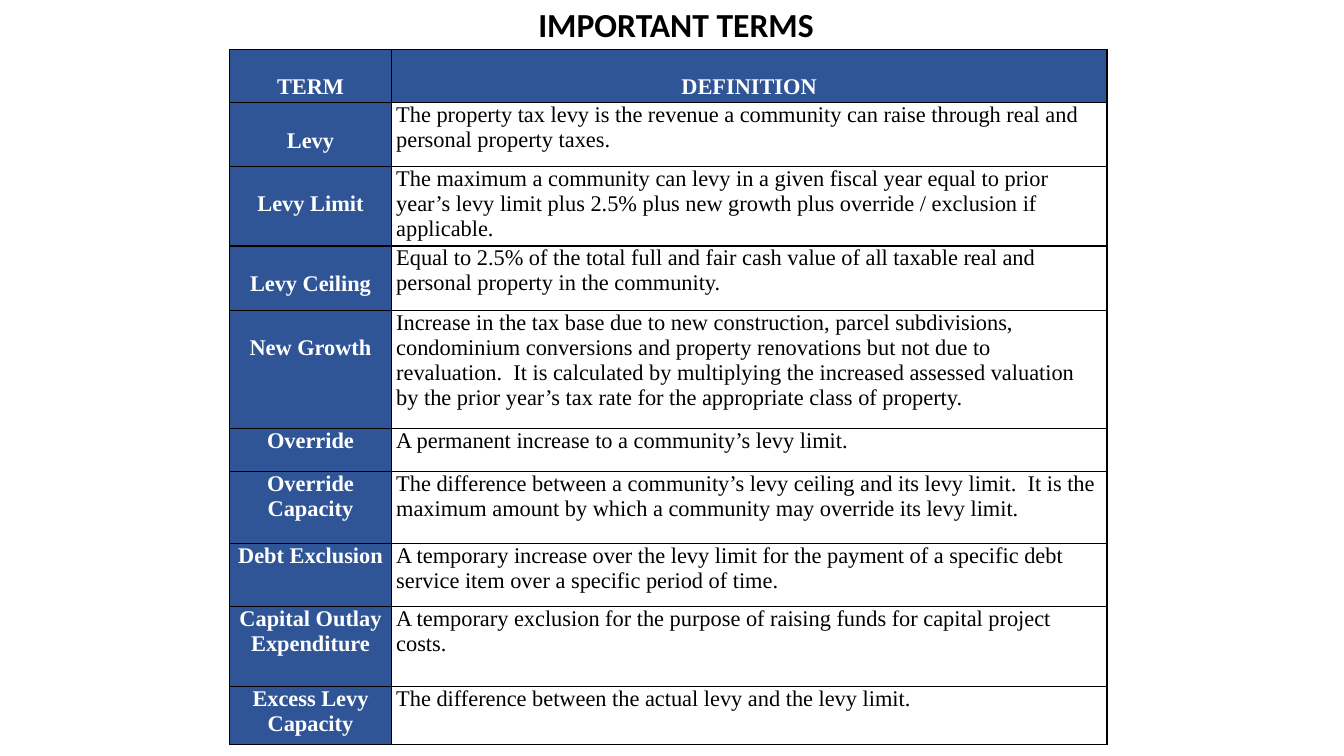
from dataclasses import dataclass

from lxml import etree
from pptx import Presentation
from pptx.dml.color import RGBColor
from pptx.enum.text import MSO_ANCHOR, PP_ALIGN
from pptx.oxml.ns import qn
from pptx.util import Inches, Pt

CENTER, LEFT = PP_ALIGN.CENTER, PP_ALIGN.LEFT
TOP = MSO_ANCHOR.TOP


@dataclass(frozen=True)
class Theme:
    blue: str = "2F5597"
    white: str = "FFFFFF"
    black: str = "000000"
    title_font: str = "Calibri"
    table_font: str = "Times New Roman"
    title_size: int = 24
    table_size: int = 16
    border: int = 1


THEME = Theme()
WIDTH, HEIGHT = 13.33, 7.5
TITLE_AREA = (2.17, -0.01, 9.07, 0.5)
TABLE_LEFT, TABLE_TOP = 2.28, 0.49
COLUMNS = (1.6, 7.1)
CELL_SIDE = 0.05
LINE = 0.25  # one line of table text
HEADER = ("TERM", "DEFINITION")

# row height, lines the term is lowered by, term, definition
TERMS = (
    (0.63, 1, "Levy", "The property tax levy is the revenue a community can raise "
     "through real and personal property taxes."),
    (0.79, 1, "Levy Limit", "The maximum a community can levy in a given fiscal year "
     "equal to prior year’s levy limit plus 2.5% plus new growth plus override / "
     "exclusion if applicable."),
    (0.64, 1, "Levy Ceiling", "Equal to 2.5% of the total full and fair cash value of "
     "all taxable real and personal property in the community."),
    (1.17, 1, "New Growth", "Increase in the tax base due to new construction, parcel "
     "subdivisions, condominium conversions and property renovations but not due to "
     "revaluation.  It is calculated by multiplying the increased assessed valuation "
     "by the prior year’s tax rate for the appropriate class of property."),
    (0.43, 0, "Override", "A permanent increase to a community’s levy limit."),
    (0.71, 0, "Override Capacity", "The difference between a community’s levy ceiling "
     "and its levy limit.  It is the maximum amount by which a community may override "
     "its levy limit."),
    (0.63, 0, "Debt Exclusion", "A temporary increase over the levy limit for the "
     "payment of a specific debt service item over a specific period of time."),
    (0.79, 0, "Capital Outlay Expenditure", "A temporary exclusion for the purpose of "
     "raising funds for capital project costs."),
    (0.58, 0, "Excess Levy Capacity", "The difference between the actual levy and the "
     "levy limit."),
)
HEADER_HEIGHT = 0.53


def set_all(target, values):
    for name, value in values.items():
        setattr(target, name, value)


def write(frame, text, align, color, **font):
    para = frame.paragraphs[0]
    para.alignment = align
    span = para.add_run()
    span.text = text
    set_all(span.font, font)
    span.font.color.rgb = RGBColor.from_string(color)


def add_borders(cell):
    """Draw all four cell edges; edges must come before the fill in the XML."""
    properties = cell._tc.get_or_add_tcPr()
    for position, edge in enumerate(("a:lnL", "a:lnR", "a:lnT", "a:lnB")):
        line = etree.Element(qn(edge), w=str(Pt(THEME.border)))
        fill = etree.SubElement(line, qn("a:solidFill"))
        etree.SubElement(fill, qn("a:srgbClr"), val=THEME.black)
        properties.insert(position, line)


def fill_cell(cell, text, heading, lowered=0):
    set_all(cell, {
        "margin_left": Inches(CELL_SIDE),
        "margin_right": Inches(CELL_SIDE),
        "margin_top": Inches(lowered * LINE),
        "margin_bottom": 0,
        "vertical_anchor": TOP,
    })
    if heading:
        cell.fill.solid()
        cell.fill.fore_color.rgb = RGBColor.from_string(THEME.blue)
    else:
        cell.fill.background()
    add_borders(cell)
    write(cell.text_frame, text, CENTER if heading else LEFT,
          THEME.white if heading else THEME.black,
          name=THEME.table_font, size=Pt(THEME.table_size), bold=heading)


def add_title(page, text):
    box = page.shapes.add_textbox(*map(Inches, TITLE_AREA))
    box.text_frame.word_wrap = True
    write(box.text_frame, text, CENTER, THEME.black,
          name=THEME.title_font, size=Pt(THEME.title_size), bold=True)


def add_terms_table(page):
    heights = [HEADER_HEIGHT] + [term[0] for term in TERMS]
    table = page.shapes.add_table(
        len(heights), len(COLUMNS), Inches(TABLE_LEFT), Inches(TABLE_TOP),
        Inches(sum(COLUMNS)), Inches(sum(heights))).table
    table.horz_banding = False
    for column, width in zip(table.columns, COLUMNS):
        column.width = Inches(width)
    for row, height in zip(table.rows, heights):
        row.height = Inches(height)
    for index, label in enumerate(HEADER):
        fill_cell(table.cell(0, index), label, True, 1)
    for index, (_, lowered, term, definition) in enumerate(TERMS, 1):
        fill_cell(table.cell(index, 0), term, True, lowered)
        fill_cell(table.cell(index, 1), definition, False)


def main():
    deck = Presentation()
    set_all(deck, {"slide_width": Inches(WIDTH), "slide_height": Inches(HEIGHT)})
    page = deck.slides.add_slide(deck.slide_layouts[6])
    add_terms_table(page)
    add_title(page, "IMPORTANT TERMS")
    deck.save("out.pptx")


if __name__ == "__main__":
    main()
